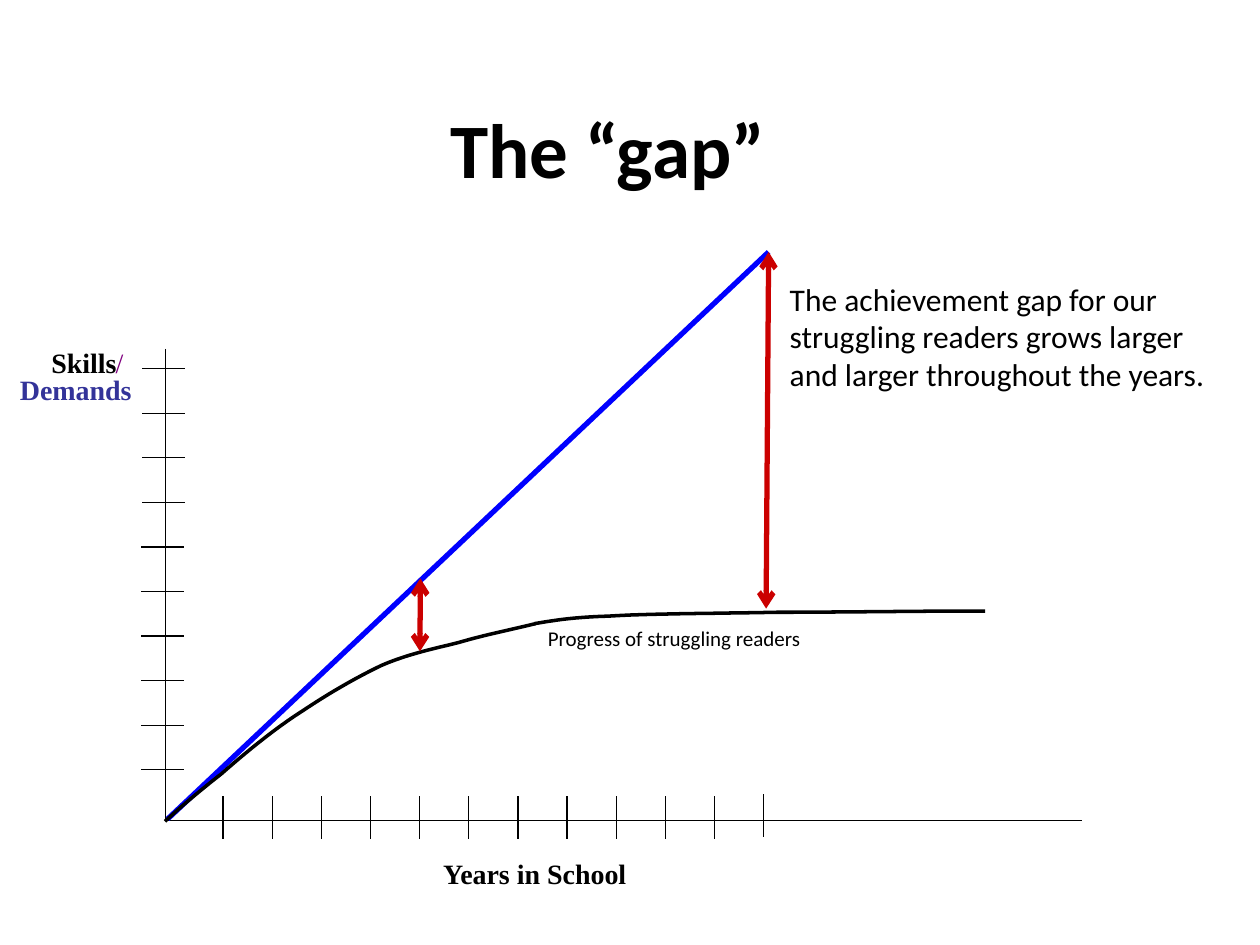
"""Build the slide showing how the reading achievement gap widens over the school years."""
from lxml.etree import SubElement
from pptx import Presentation
from pptx.dml.color import RGBColor
from pptx.enum.shapes import MSO_CONNECTOR
from pptx.enum.text import MSO_ANCHOR, PP_ALIGN
from pptx.oxml.ns import qn
from pptx.util import Pt

SERIF = "Times New Roman"
TEXTS = [
    ("The “gap”", (48.2, 30.2, 598.3, 108),
     dict(size=44, bold=True, align=PP_ALIGN.CENTER, anchor=MSO_ANCHOR.MIDDLE)),
    ("Years in School", (246.2, 486, 121, 26.6), dict(font=SERIF, bold=True, wrap=False)),
    ("Skills", (22.3, 193.7, 51.8, 26.6), dict(font=SERIF, bold=True, wrap=False)),
    ("/", (59, 193.7, 18.7, 26.6), dict(font=SERIF, color="800080", wrap=False)),
    ("Demands", (4.3, 209.5, 78.5, 26.6),
     dict(font=SERIF, bold=True, color="333399", wrap=False)),
    ("The achievement gap for our struggling readers grows larger and larger throughout the years.",
     (444.2, 156.2, 257.8, 94.3), dict(size=18)),
    ("Progress of struggling readers", (306, 354.2, 177.1, 21.6), dict(size=12, wrap=False)),
]
AXES = [(94.4, 199.4, 94.4, 468.7), (94.4, 468.7, 618.5, 468.7)]
DEMANDS_LINE = (95.8, 468, 439.2, 144)
GAP_ARROWS = [(240, 372.2, 240.2, 330.5), (437.8, 347.8, 439.2, 144)]
PROGRESS_CURVES = [
    [(94.3, 469.4), (103.7, 460.8), (113.8, 452.2), (126.7, 442.1), (139, 431.3),
     (156.2, 416.9), (172.1, 406.8), (187.2, 396.7), (203, 387.4), (218.2, 380.2),
     (233.3, 373.7), (247.7, 370.8), (262.1, 367.2), (276.5, 362.9), (291.6, 360),
     (306, 356.4)],
    [(305.3, 356.4), (314.6, 355), (324.7, 352.8), (347.8, 352.1), (371.5, 350.6),
     (409, 350.6), (444.2, 349.9), (480.2, 349.9), (521.3, 349.2), (563, 349.2)],
]
YEAR_COUNT, FIRST_YEAR, YEAR_STEP = 12, 127.5, 28.08
SKILL_COUNT, FIRST_SKILL, SKILL_STEP = 10, 439.9, 25.47
TICK_LENGTH = 24.4
CURVE_STEPS = 12


def color_of(value):
    return RGBColor.from_string(value)


def add_text(slide, text, box, font="Calibri", size=16, bold=False, color="000000",
             align=PP_ALIGN.LEFT, anchor=MSO_ANCHOR.TOP, wrap=True):
    shape = slide.shapes.add_textbox(*map(Pt, box))
    frame = shape.text_frame
    frame.word_wrap = wrap
    frame.vertical_anchor = anchor
    paragraph = frame.paragraphs[0]
    paragraph.alignment = align
    run = paragraph.add_run()
    run.text = text
    run.font.name = font
    run.font.size = Pt(size)
    run.font.bold = bold
    run.font.color.rgb = color_of(color)


def add_line(slide, ends, color="000000", width=0.75, arrows=False):
    connector = slide.shapes.add_connector(MSO_CONNECTOR.STRAIGHT, *map(Pt, ends))
    connector.line.color.rgb = color_of(color)
    connector.line.width = Pt(width)
    if arrows:
        for tag in ("a:headEnd", "a:tailEnd"):
            SubElement(connector.line._get_or_add_ln(), qn(tag), type="arrow")
    SubElement(connector._element.spPr, qn("a:effectLst"))


def curve_points(controls):
    points = [controls[0]]
    for start in range(0, len(controls) - 1, 3):
        segment = controls[start:start + 4]
        for step in range(1, CURVE_STEPS + 1):
            t = step / CURVE_STEPS
            weights = ((1 - t) ** 3, 3 * t * (1 - t) ** 2, 3 * t ** 2 * (1 - t), t ** 3)
            points.append(tuple(sum(weight * point[axis] for weight, point in zip(weights, segment))
                                for axis in (0, 1)))
    return points


def add_curve(slide, controls):
    points = [(Pt(x), Pt(y)) for x, y in curve_points(controls)]
    builder = slide.shapes.build_freeform(*points[0])
    builder.add_line_segments(points[1:], close=False)
    shape = builder.convert_to_shape()
    shape.shadow.inherit = False
    shape.fill.background()
    shape.line.color.rgb = color_of("000000")
    shape.line.width = Pt(2)


def main():
    presentation = Presentation()
    presentation.slide_width, presentation.slide_height = Pt(720), Pt(540)
    slide = presentation.slides.add_slide(presentation.slide_layouts[6])

    for axis in AXES:
        add_line(slide, axis)
    add_line(slide, DEMANDS_LINE, color="0000FF", width=3)
    for index in range(YEAR_COUNT):
        x = FIRST_YEAR + index * YEAR_STEP
        top = 453.8 if index == YEAR_COUNT - 1 else 455
        add_line(slide, (x, top, x, top + TICK_LENGTH))
    for index in range(SKILL_COUNT):
        y = FIRST_SKILL - index * SKILL_STEP
        left = 80.8 if index < 6 else 81.2
        add_line(slide, (left, y, left + TICK_LENGTH, y))
    for controls in PROGRESS_CURVES:
        add_curve(slide, controls)
    for arrow in GAP_ARROWS:
        add_line(slide, arrow, color="CB0000", width=3, arrows=True)
    for text, box, style in TEXTS:
        add_text(slide, text, box, **style)

    presentation.save("out.pptx")


if __name__ == "__main__":
    main()
